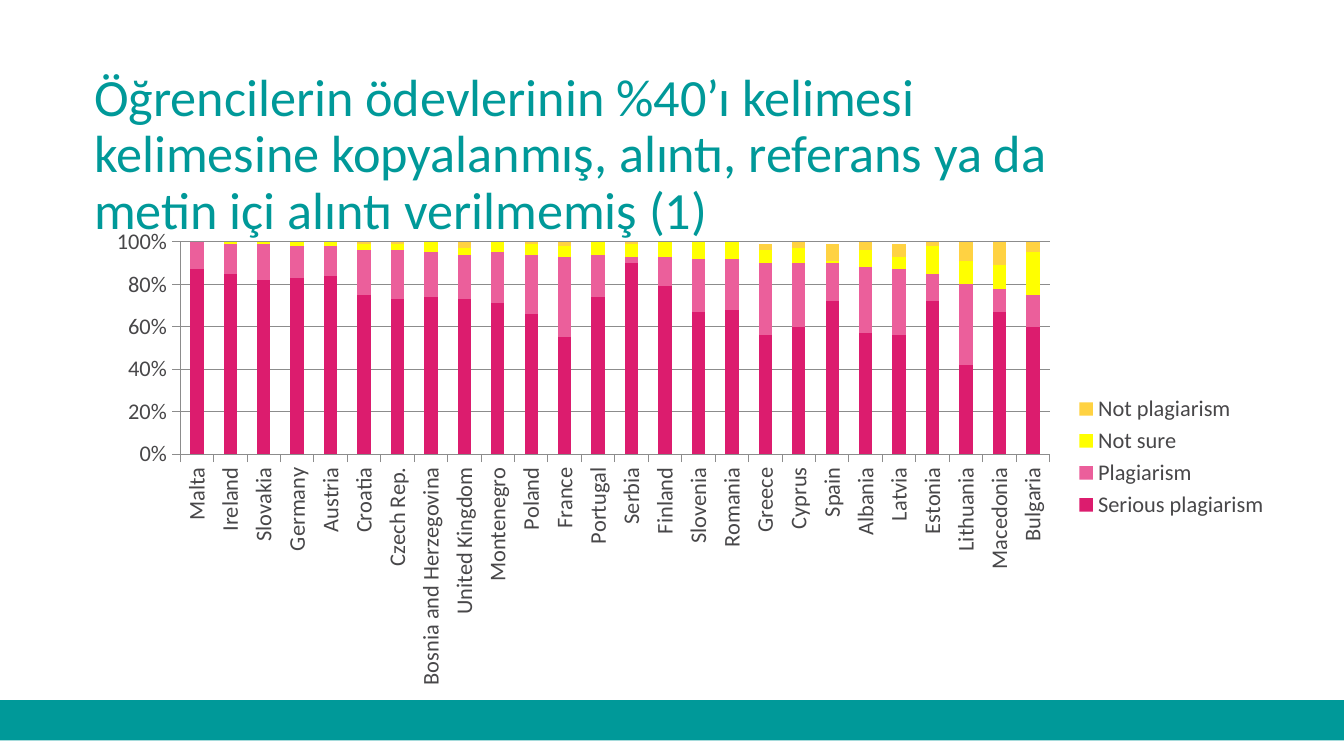
from lxml.etree import SubElement
from pptx import Presentation
from pptx.chart.data import CategoryChartData
from pptx.dml.color import RGBColor
from pptx.enum.chart import XL_CHART_TYPE, XL_LEGEND_POSITION, XL_TICK_MARK
from pptx.enum.shapes import MSO_SHAPE
from pptx.enum.text import MSO_ANCHOR, MSO_AUTO_SIZE, PP_ALIGN
from pptx.oxml.ns import qn
from pptx.util import Inches, Pt

TEAL = RGBColor(0x00, 0x99, 0x99)
DARK_GRAY = RGBColor(0x48, 0x47, 0x49)
LINE_GRAY = RGBColor(0x8C, 0x8C, 0x8C)
MAGENTA = RGBColor(0xDC, 0x1C, 0x6E)
PINK = RGBColor(0xEB, 0x5F, 0x9B)
YELLOW = RGBColor(0xFF, 0xFF, 0x00)
AMBER = RGBColor(0xFF, 0xD2, 0x42)
FONT = "Calibri"

TITLE = (
    "Öğrencilerin ödevlerinin %40’ı kelimesi kelimesine kopyalanmış, "
    "alıntı, referans ya da metin içi alıntı verilmemiş (1)"
)
ANSWERS = {
    "Serious plagiarism": MAGENTA,
    "Plagiarism": PINK,
    "Not sure": YELLOW,
    "Not plagiarism": AMBER,
}
COUNTRIES = {
    "Malta": (0.87, 0.13, 0, 0),
    "Ireland": (0.85, 0.14, 0.01, 0),
    "Slovakia": (0.82, 0.17, 0.01, 0.01),
    "Germany": (0.83, 0.15, 0.02, 0),
    "Austria": (0.84, 0.14, 0.02, 0.01),
    "Croatia": (0.75, 0.21, 0.03, 0.01),
    "Czech Rep.": (0.73, 0.23, 0.03, 0.01),
    "Bosnia and Herzegovina": (0.74, 0.21, 0.05, 0),
    "United Kingdom": (0.73, 0.21, 0.03, 0.03),
    "Montenegro": (0.71, 0.24, 0.06, 0),
    "Poland": (0.66, 0.28, 0.05, 0.01),
    "France": (0.55, 0.38, 0.05, 0.02),
    "Portugal": (0.74, 0.2, 0.06, 0.01),
    "Serbia": (0.9, 0.03, 0.06, 0.01),
    "Finland": (0.79, 0.14, 0.07, 0.01),
    "Slovenia": (0.67, 0.25, 0.08, 0),
    "Romania": (0.68, 0.24, 0.08, 0.01),
    "Greece": (0.56, 0.34, 0.06, 0.03),
    "Cyprus": (0.6, 0.3, 0.07, 0.03),
    "Spain": (0.72, 0.18, 0.01, 0.08),
    "Albania": (0.57, 0.31, 0.08, 0.04),
    "Latvia": (0.56, 0.31, 0.06, 0.06),
    "Estonia": (0.72, 0.13, 0.13, 0.02),
    "Lithuania": (0.42, 0.38, 0.11, 0.09),
    "Macedonia": (0.67, 0.11, 0.11, 0.11),
    "Bulgaria": (0.6, 0.15, 0.2, 0.05),
}


def apply_format(target, values):
    for name, value in values.items():
        setattr(target, name, value)


def add_footer_band(slide, left, top, width, height):
    band = slide.shapes.add_shape(MSO_SHAPE.RECTANGLE, left, top, width, height)
    band.shadow.inherit = False
    band.fill.solid()
    band.fill.fore_color.rgb = TEAL
    band.line.fill.background()


def place_title(slide, left, top, width, height):
    title = slide.shapes.title
    apply_format(title, {"left": left, "top": top, "width": width, "height": height})
    frame = title.text_frame
    frame.text = TITLE
    apply_format(frame, {
        "word_wrap": True,
        "auto_size": MSO_AUTO_SIZE.NONE,
        "vertical_anchor": MSO_ANCHOR.MIDDLE,
    })
    paragraph = frame.paragraphs[0]
    apply_format(paragraph, {
        "alignment": PP_ALIGN.LEFT,
        "line_spacing": 0.9,
        "space_before": Pt(0),
    })
    font = paragraph.runs[0].font
    apply_format(font, {"name": FONT, "size": Pt(28)})
    font.color.rgb = TEAL


def set_plot_layout(chart, width, height):
    plot_area = chart.element.find(".//" + qn("c:plotArea"))
    for layout in plot_area.findall(qn("c:layout")):
        plot_area.remove(layout)
    layout = SubElement(plot_area, qn("c:layout"))
    plot_area.insert(0, layout)
    manual = SubElement(layout, qn("c:manualLayout"))
    values = {
        "layoutTarget": "inner",
        "xMode": "edge",
        "yMode": "edge",
        "x": Inches(0.65) / width,
        "y": Inches(0.17) / height,
        "w": Inches(6.47) / width,
        "h": Inches(1.58) / height,
    }
    for name, value in values.items():
        SubElement(manual, qn("c:" + name)).set("val", str(value))


def format_axes(chart):
    category_axis, value_axis = chart.category_axis, chart.value_axis
    apply_format(value_axis, {
        "minimum_scale": 0,
        "maximum_scale": 1,
        "major_unit": 0.2,
        "has_major_gridlines": True,
    })
    category_axis.has_major_gridlines = False
    for axis in (category_axis, value_axis):
        axis.major_tick_mark = XL_TICK_MARK.OUTSIDE
        axis.tick_labels.font.size = Pt(12)
    for part in (category_axis, value_axis, value_axis.major_gridlines):
        part.format.line.color.rgb = LINE_GRAY
        part.format.line.width = Pt(0.5)
    apply_format(value_axis.tick_labels, {
        "number_format": "0%",
        "number_format_is_linked": False,
    })
    label_body = category_axis._element.find(".//" + qn("a:bodyPr"))
    label_body.set("rot", "-5400000")
    label_body.set("vert", "horz")


def add_survey_chart(slide, left, top, width, height):
    data = CategoryChartData(number_format="0%")
    data.categories = COUNTRIES.keys()
    for answer, shares in zip(ANSWERS, zip(*COUNTRIES.values())):
        data.add_series(answer, shares)
    chart = slide.shapes.add_chart(
        XL_CHART_TYPE.COLUMN_STACKED, left, top, width, height, data
    ).chart
    apply_format(chart, {"has_title": False, "has_legend": True})
    apply_format(chart.font, {"name": FONT, "size": Pt(12)})
    chart.font.color.rgb = DARK_GRAY
    apply_format(chart.legend, {
        "position": XL_LEGEND_POSITION.RIGHT,
        "include_in_layout": False,
    })
    plot = chart.plots[0]
    apply_format(plot, {"gap_width": 150, "overlap": 100, "vary_by_categories": False})
    for series, color in zip(plot.series, ANSWERS.values()):
        series.format.fill.solid()
        series.format.fill.fore_color.rgb = color
    format_axes(chart)
    set_plot_layout(chart, width, height)


def main():
    presentation = Presentation()
    slide_width = Inches(10)
    apply_format(presentation, {
        "slide_width": slide_width,
        "slide_height": slide_width * 9 // 16,
    })
    slide = presentation.slides.add_slide(presentation.slide_layouts[5])
    add_footer_band(slide, Inches(0), Inches(5.21), slide_width, Inches(0.3))
    add_survey_chart(slide, Inches(0.69), Inches(1.63), Inches(8.85), Inches(3.54))
    place_title(slide, Inches(0.6), Inches(0.69), Inches(7.83), Inches(0.94))
    presentation.save("out.pptx")


if __name__ == "__main__":
    main()
